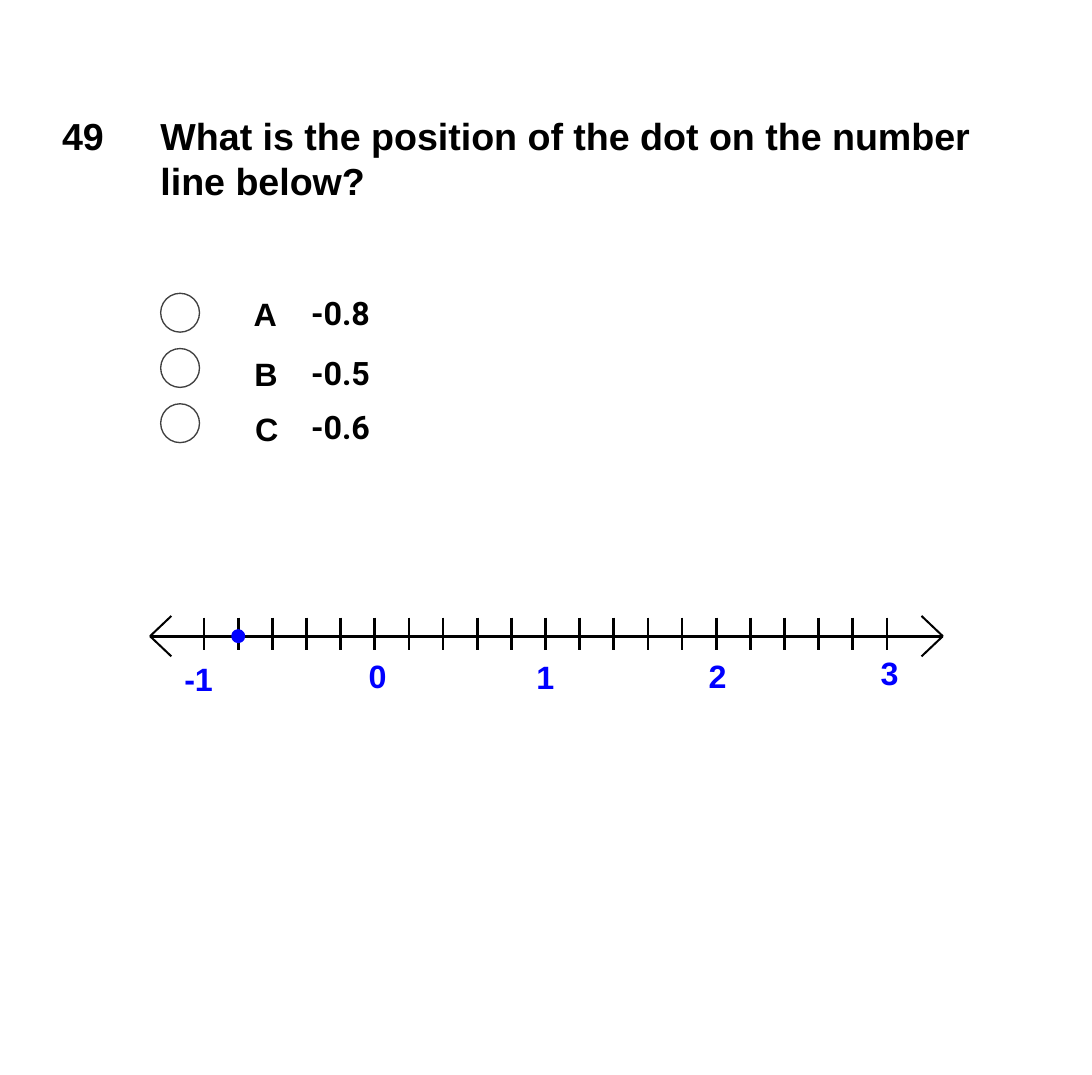
from pptx import Presentation
from pptx.dml.color import RGBColor
from pptx.enum.shapes import MSO_CONNECTOR, MSO_SHAPE
from pptx.enum.text import MSO_ANCHOR, MSO_AUTO_SIZE, PP_ALIGN
from pptx.oxml.ns import qn
from pptx.util import Cm, Inches, Pt

STRAIGHT, OVAL = MSO_CONNECTOR.STRAIGHT, MSO_SHAPE.OVAL
TOP, LEFT, NO_FIT = MSO_ANCHOR.TOP, PP_ALIGN.LEFT, MSO_AUTO_SIZE.NONE
BLACK = RGBColor(0x00, 0x00, 0x00)
BLUE = RGBColor(0x00, 0x00, 0xFF)
GREY = RGBColor(0x40, 0x40, 0x40)
WHITE = RGBColor(0xFF, 0xFF, 0xFF)

deck = Presentation()
deck.slide_width, deck.slide_height = Inches(11.29), Inches(11.11)
page = deck.slides.add_slide(deck.slide_layouts[5])


def add_text(text, left, top, width, size, font="Arial", color=BLACK, inset=(0.25, 0.13)):
    box = page.shapes.add_textbox(Cm(left), Cm(top), Cm(width), Cm(1.3))
    frame = box.text_frame
    frame.word_wrap = True
    frame.margin_left = frame.margin_right = Cm(inset[0])
    frame.margin_top = frame.margin_bottom = Cm(inset[1])
    para = frame.paragraphs[0]
    para.text = text
    para.font.name, para.font.size, para.font.bold = font, Pt(size), True
    para.font.color.rgb = color


def add_line(x1, y1, x2, y2, weight=2):
    line = page.shapes.add_connector(STRAIGHT, Cm(x1), Cm(y1), Cm(x2), Cm(y2))
    line.line.color.rgb = BLACK
    line.line.width = Pt(weight)
    properties = line._element.spPr
    properties.append(properties.makeelement(qn("a:effectLst"), {}))


# Question
add_text("49", 1.38, 2.84, 1.88, 28)
title = page.shapes.title
title.left, title.top, title.width, title.height = Cm(3.96), Cm(2.84), Cm(23.09), Cm(2.64)
title.text_frame.text = "What is the position of the dot on the number line below?"
title.text_frame.vertical_anchor = TOP
title.text_frame.auto_size = NO_FIT
question = title.text_frame.paragraphs[0]
question.alignment = LEFT
question.font.name, question.font.size, question.font.bold = "Arial", Pt(28), True
question.font.color.rgb = BLACK

# Answer choices: letter, value, top of each
choices = [("A", 7.58, "-0.8", 7.55), ("B", 9.15, "-0.5", 9.12), ("C", 10.59, "-0.6", 10.54)]
for row, (letter, letter_top, value, value_top) in enumerate(choices):
    add_text(letter, 6.36 + 0.02 * row, letter_top, 1.04, 24, inset=(0.3, 0.15))
    add_text(value, 7.87, value_top, 3.2, 24, font="Roboto", inset=(0.3, 0.15))
    circle = page.shapes.add_shape(OVAL, Cm(4.22), Cm(7.7 + 1.45 * row), Cm(1.02), Cm(1.02))
    circle.shadow.inherit = False
    circle.fill.solid()
    circle.fill.fore_color.rgb = WHITE
    circle.line.color.rgb = GREY
    circle.line.width = Pt(1)

# Number line with an open arrowhead at each end
AXIS_Y, AXIS_START, AXIS_END = 16.7, 3.94, 24.76
add_line(AXIS_START, AXIS_Y, AXIS_END, AXIS_Y)
for tip, inward in [(AXIS_START, 0.56), (AXIS_END, -0.56)]:
    for rise in (-0.53, 0.53):
        add_line(tip, AXIS_Y, tip + inward, AXIS_Y + rise, 1.5)

# Ticks every 0.2 from -1 to 3
FIRST_TICK, LAST_TICK, INTERVALS = 5.36, 23.29, 20
tick_gap = (LAST_TICK - FIRST_TICK) / INTERVALS
for index in range(INTERVALS + 1):
    tick_x = FIRST_TICK + index * tick_gap
    add_line(tick_x, 16.21, tick_x, 17.05)

# Whole-number labels
labels = [("-1", 4.59, 17.17), ("0", 9.43, 17.11), ("1", 13.84, 17.13),
          ("2", 18.36, 17.11), ("3", 22.88, 17.03)]
for number, left, top in labels:
    add_text(number, left, top, 1.8, 24, color=BLUE)

# Dot on the second tick
DOT_SIZE = 0.26
dot = page.shapes.add_shape(OVAL, Cm(FIRST_TICK + tick_gap - DOT_SIZE / 2),
                            Cm(AXIS_Y - DOT_SIZE / 2), Cm(DOT_SIZE), Cm(DOT_SIZE))
dot.shadow.inherit = False
dot.fill.solid()
dot.fill.fore_color.rgb = BLUE
dot.line.color.rgb = BLUE
dot.line.width = Pt(3)

deck.save("out.pptx")
